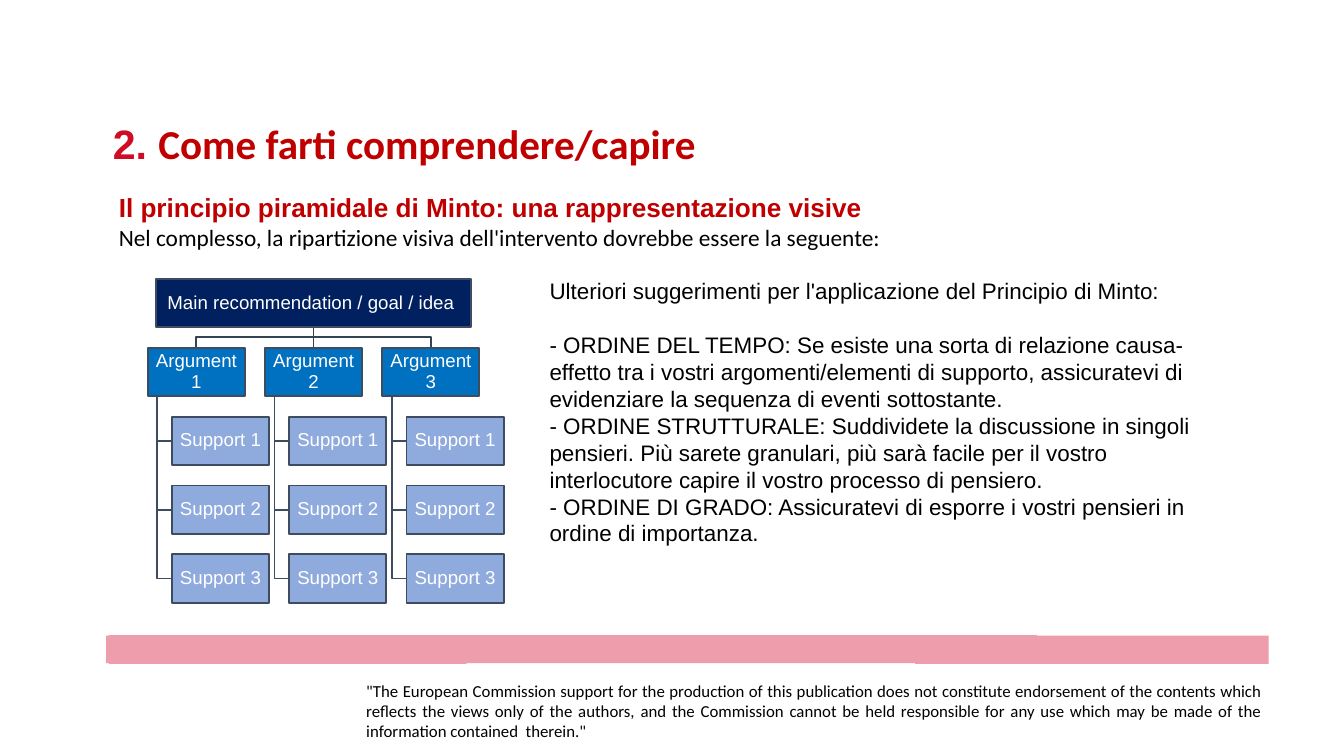
import pptx
import pptx.dml.color
import pptx.enum.shapes
import pptx.enum.text
import pptx.util

PX = pptx.util.Inches(1) // 200
ALIGN = pptx.enum.text.PP_ALIGN
ANCHOR = pptx.enum.text.MSO_ANCHOR
MARGINS = ("margin_left", "margin_top", "margin_right", "margin_bottom")

RED = "C00000"
BOX_LINE = "3E4C60"
TRUNK_LINE = "364355"


def rgb(value):
    return pptx.dml.color.RGBColor.from_string(value)


def run(text, size, color="000000", font="Arial", bold=False):
    """Describe one stretch of text in a single format."""
    return text, {"size": pptx.util.Pt(size), "name": font, "bold": bold}, color


class SlideBuilder:
    line_width = pptx.util.Pt(2)

    def __init__(self, slide):
        self.shapes = slide.shapes

    def fill_frame(self, frame, paragraphs, insets, **paragraph_format):
        """Fill a text frame; each paragraph is a list of runs."""
        frame.word_wrap = True
        for margin, inset in zip(MARGINS, insets):
            setattr(frame, margin, inset * PX)
        for index, runs in enumerate(paragraphs):
            paragraph = frame.add_paragraph() if index else frame.paragraphs[0]
            for name, value in paragraph_format.items():
                setattr(paragraph, name, value)
            for text, font_format, color in runs:
                piece = paragraph.add_run()
                piece.text = text
                for name, value in font_format.items():
                    setattr(piece.font, name, value)
                piece.font.color.rgb = rgb(color)

    def text(self, x, y, width, height, paragraphs, insets=(20, 10, 20, 10), **paragraph_format):
        box = self.shapes.add_textbox(x * PX, y * PX, width * PX, height * PX)
        self.fill_frame(box.text_frame, paragraphs, insets, **paragraph_format)
        box.text_frame.auto_size = pptx.enum.text.MSO_AUTO_SIZE.SHAPE_TO_FIT_TEXT
        return box

    def box(self, x, y, width, height, label, fill):
        box = self.shapes.add_shape(
            pptx.enum.shapes.MSO_SHAPE.RECTANGLE, x * PX, y * PX, width * PX, height * PX)
        box.shadow.inherit = False
        box.fill.solid()
        box.fill.fore_color.rgb = rgb(fill)
        box.line.color.rgb = rgb(BOX_LINE)
        box.line.width = self.line_width
        self.fill_frame(box.text_frame, [[run(label, 20, "FFFFFF")]], (2, 2, 2, 2),
                        alignment=ALIGN.CENTER, line_spacing=0.9)
        box.text_frame.vertical_anchor = ANCHOR.MIDDLE

    def outline(self, points, close):
        builder = self.shapes.build_freeform(*points[0], scale=PX)
        builder.add_line_segments(points[1:], close=close)
        outline = builder.convert_to_shape()
        outline.shadow.inherit = False
        return outline

    def band(self, points, fill):
        band = self.outline(points, True)
        band.fill.solid()
        band.fill.fore_color.rgb = rgb(fill)
        band.line.fill.background()

    def branch(self, points, color):
        branch = self.outline(points, False)
        branch.fill.background()
        branch.line.color.rgb = rgb(color)
        branch.line.width = self.line_width


def draw_pyramid(page):
    goal_x, goal_y, goal_width = 464, 830, 938
    box_width, box_height = 289, 144
    first_x, column_step = 440, 349
    argument_y, row_step = 1035, 205
    stem_offset, support_offset = 28, 72
    center = goal_x + goal_width // 2
    goal_bottom = goal_y + box_height
    columns = [first_x + column_step * i for i in range(3)]
    rows = [argument_y + row_step * i for i in range(1, 4)]

    for x in columns:
        stem = x + stem_offset
        for y in rows:
            middle = y + box_height // 2
            page.branch([(stem, argument_y + box_height), (stem, middle),
                         (x + support_offset, middle)], BOX_LINE)
        bend = (goal_bottom + argument_y) // 2
        top = x + box_width // 2
        page.branch([(center, goal_bottom), (center, bend), (top, bend),
                     (top, argument_y)], TRUNK_LINE)

    page.box(goal_x, goal_y, goal_width, box_height,
             "Main recommendation / goal / idea ", "002060")
    for number, x in enumerate(columns, 1):
        page.box(x, argument_y, box_width, box_height, f"Argument {number}", "0070C0")
        for support, y in enumerate(rows, 1):
            page.box(x + support_offset, y, box_width, box_height,
                     f"Support {support}", "8FAADC")


def main():
    deck = pptx.Presentation()
    deck.slide_width, deck.slide_height = 4000 * PX, 2250 * PX
    page = SlideBuilder(deck.slides.add_slide(deck.slide_layouts[6]))

    page.band([(3776, 1892), (3086, 1892), (3086, 1890), (2034, 1890), (324, 1890),
               (324, 1892), (316, 1892), (316, 1974), (324, 1974), (324, 1976),
               (1388, 1976), (1388, 1974), (2724, 1974), (2724, 1976), (3776, 1976)],
              "ED9DAB")
    disclaimer = (
        '"The European Commission support for the production of this publication does not '
        "constitute endorsement of the contents which reflects the views only of the authors, "
        "and the Commission cannot be held responsible for any use which may be made of the "
        'information contained  therein."')
    page.text(1090, 2030, 2666, 152, [[run(disclaimer, 18, font="Calibri")]],
              (0, 0, 0, 0), alignment=ALIGN.JUSTIFY, line_spacing=0.98)

    page.text(316, 344, 2692, 168, [[
        run("2. ", 44, "D00B24", bold=True),
        run("Come farti comprendere/capire", 44, RED, "Calibri", True)]])
    page.text(334, 560, 3470, 198, [
        [run("Il principio piramidale di Minto: una rappresentazione visive", 28, RED, bold=True)],
        [run("Nel complesso, la ripartizione visiva dell'intervento dovrebbe essere la seguente:",
             25, font="Calibri")]])

    draw_pyramid(page)

    suggestions = [
        "Ulteriori suggerimenti per l'applicazione del Principio di Minto:",
        "- ORDINE DEL TEMPO: Se esiste una sorta di relazione causa-effetto tra i vostri "
        "argomenti/elementi di supporto, assicuratevi di evidenziare la sequenza di eventi "
        "sottostante.",
        "- ORDINE STRUTTURALE: Suddividete la discussione in singoli pensieri. Più sarete "
        "granulari, più sarà facile per il vostro interlocutore capire il vostro processo "
        "di pensiero.",
        "- ORDINE DI GRADO: Assicuratevi di esporre i vostri pensieri in ordine di importanza.",
    ]
    advice = page.text(1616, 816, 1988, 908, [[run(line, 24)] for line in suggestions])
    advice.text_frame.paragraphs[1].space_before = pptx.util.Pt(29)

    deck.save("out.pptx")


if __name__ == "__main__":
    main()
